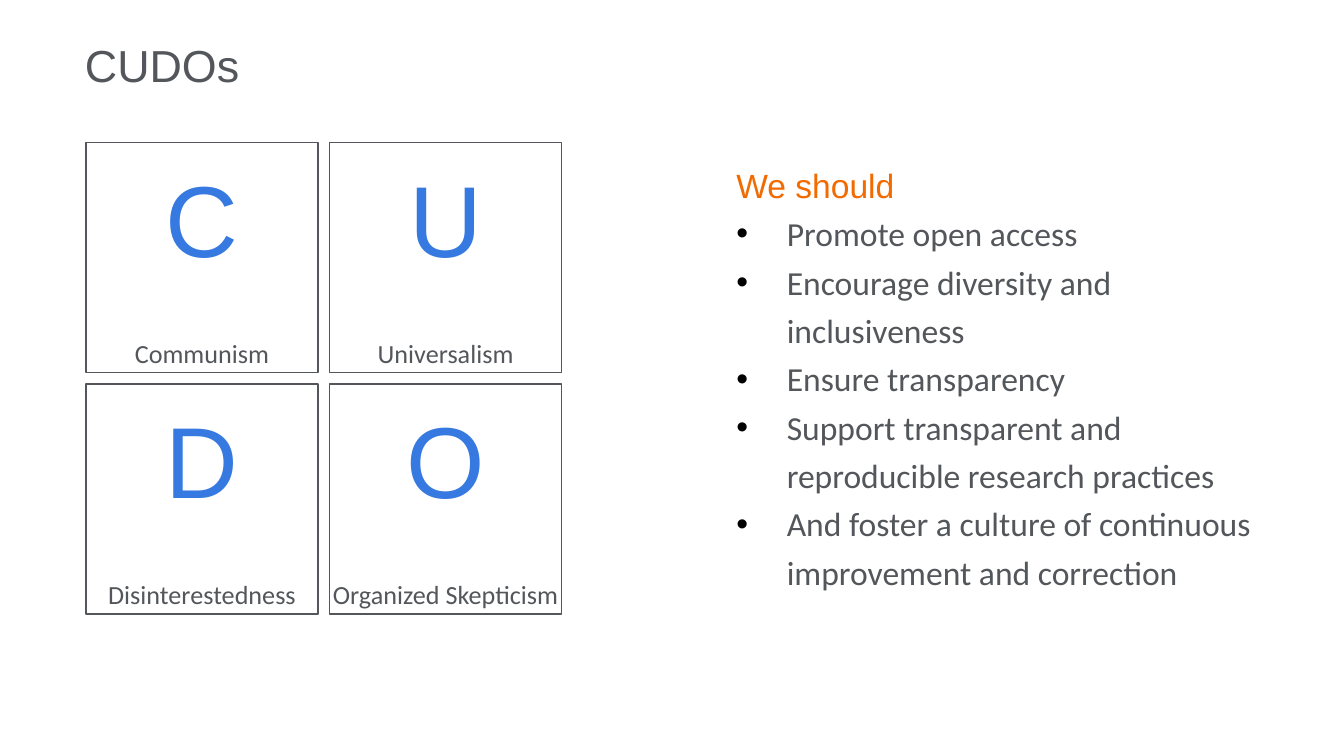
from pptx import Presentation
from pptx.dml.color import RGBColor
from pptx.enum.shapes import MSO_SHAPE
from pptx.enum.text import MSO_ANCHOR, MSO_AUTO_SIZE, PP_ALIGN
from pptx.oxml.ns import qn
from pptx.util import Pt
from lxml.etree import SubElement

COLORS = {
    "white": "FFFFFF",
    "black": "000000",
    "gray": "53565A",
    "blue": "3679E0",
    "orange": "F26B00",
}

TILES = [
    ("C", "Communism"),
    ("U", "Universalism"),
    ("D", "Disinterestedness"),
    ("O", "Organized Skepticism"),
]

DUTIES = [
    "Promote open access",
    "Encourage diversity and inclusiveness",
    "Ensure transparency",
    "Support transparent and reproducible research practices",
    "And foster a culture of continuous improvement and correction",
]


def color(name):
    return RGBColor.from_string(COLORS[name])


def place(shape, box):
    shape.left, shape.top, shape.width, shape.height = [Pt(n) for n in box]


def prepare(frame, anchor, wrap=True):
    frame.margin_left = frame.margin_right = 0
    frame.margin_top = frame.margin_bottom = 0
    frame.vertical_anchor = anchor
    frame.word_wrap = wrap
    frame.auto_size = MSO_AUTO_SIZE.NONE


def add_run(para, text, font, size, tint):
    run = para.add_run()
    run.text = text
    run.font.name = font
    run.font.size = Pt(size)
    run.font.color.rgb = color(tint)


def set_bullet(para, mark=None, indent=0):
    props = para._p.get_or_add_pPr()
    props.set("marL", str(Pt(indent)))
    props.set("indent", str(-Pt(indent)))
    if mark is None:
        SubElement(props, qn("a:buNone"))
        return
    tint = SubElement(props, qn("a:buClr"))
    SubElement(tint, qn("a:srgbClr"), val=COLORS["black"])
    SubElement(props, qn("a:buFont"), typeface="Arial")
    SubElement(props, qn("a:buChar"), char=mark)


def add_title(slide, box):
    title = slide.shapes.title
    place(title, box)
    prepare(title.text_frame, MSO_ANCHOR.MIDDLE)
    para = title.text_frame.paragraphs[0]
    para.alignment = PP_ALIGN.LEFT
    add_run(para, "CUDOs", "Arial", 24, "gray")


def add_label(slide, box, text, font, size, tint):
    label = slide.shapes.add_textbox(*[Pt(n) for n in box])
    prepare(label.text_frame, MSO_ANCHOR.TOP, wrap=False)
    para = label.text_frame.paragraphs[0]
    para.alignment = PP_ALIGN.CENTER
    add_run(para, text, font, size, tint)


def add_tile(slide, box, letter, name):
    left, top, width, height = box
    tile = slide.shapes.add_shape(MSO_SHAPE.RECTANGLE, *[Pt(n) for n in box])
    tile.shadow.inherit = False
    tile.fill.solid()
    tile.fill.fore_color.rgb = color("white")
    tile.line.color.rgb = color("gray")
    tile.line.width = Pt(0.75)
    add_label(slide, (left, top + 7.5, width, 98), letter, "Arial", 54, "blue")
    add_label(slide, (left, top + height - 19, width, 19.5),
              name, "Calibri", 14, "gray")


def add_grid(slide, box, gap=6, cols=2):
    left, top, width, height = box
    rows = len(TILES) // cols
    wide = (width - gap * (cols - 1)) / cols
    high = (height - gap * (rows - 1)) / rows
    for i, (letter, name) in enumerate(TILES):
        row, col = divmod(i, cols)
        spot = (left + col * (wide + gap), top + row * (high + gap), wide, high)
        add_tile(slide, spot, letter, name)


def add_list(slide, box):
    body = slide.placeholders[1]
    place(body, box)
    frame = body.text_frame
    prepare(frame, MSO_ANCHOR.TOP)
    head = frame.paragraphs[0]
    set_bullet(head)
    add_run(head, "We should", "Arial", 18, "orange")
    for duty in DUTIES:
        para = frame.add_paragraph()
        set_bullet(para, "•", 27)
        add_run(para, duty, "Calibri", 18, "gray")
    for para in frame.paragraphs:
        para.alignment = PP_ALIGN.LEFT
        para.line_spacing = 1.2
        para.space_before = Pt(0)


def main():
    deck = Presentation()
    deck.slide_width, deck.slide_height = Pt(720), Pt(405)
    slide = deck.slides.add_slide(deck.slide_layouts[1])
    add_title(slide, (45.5, 15, 615.5, 39.5))
    add_grid(slide, (46, 76.5, 255, 252.5))
    add_list(slide, (394.5, 84, 280, 257))
    deck.save("out.pptx")


if __name__ == "__main__":
    main()
